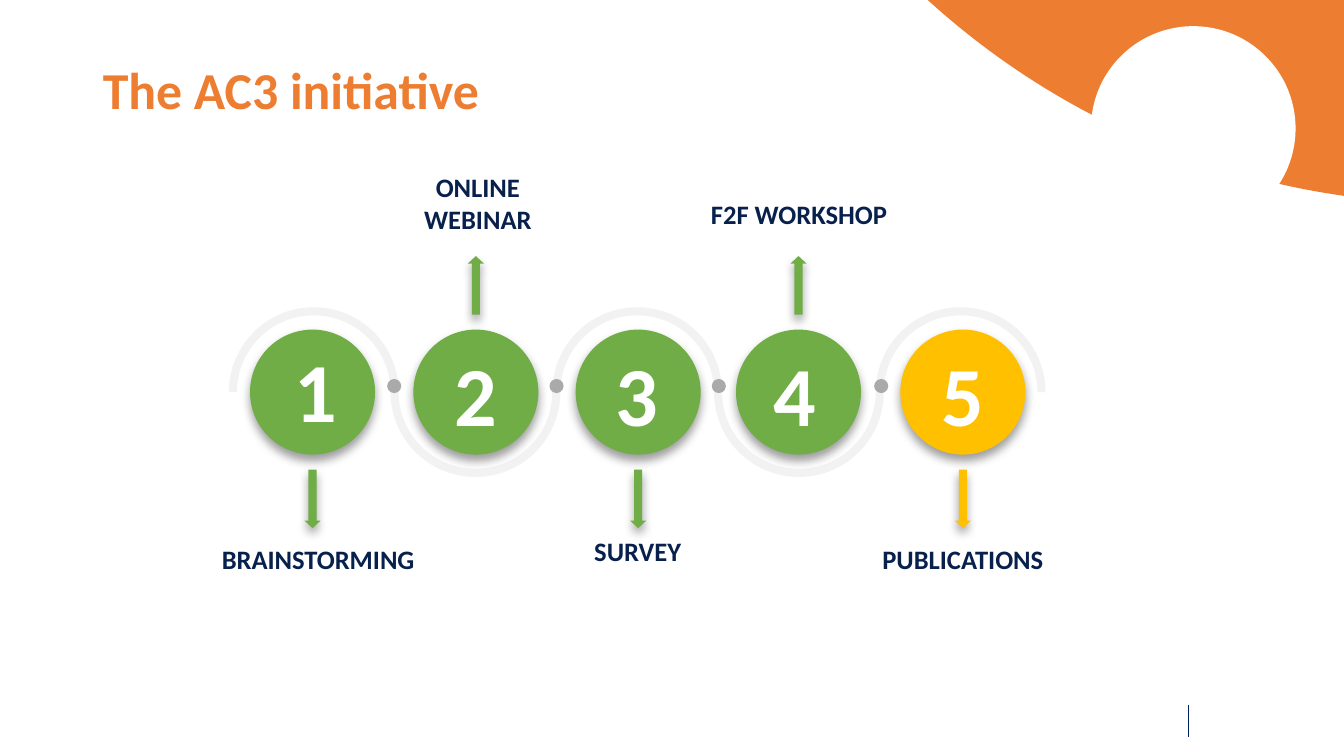
from math import cos, pi, sin

from lxml import etree
from pptx import Presentation
from pptx.dml.color import RGBColor
from pptx.enum.shapes import MSO_CONNECTOR, MSO_SHAPE
from pptx.enum.text import MSO_ANCHOR, PP_ALIGN
from pptx.oxml import parse_xml
from pptx.oxml.ns import nsdecls, qn
from pptx.util import Inches, Pt

OVAL = MSO_SHAPE.OVAL
UP_ARROW, DOWN_ARROW = MSO_SHAPE.UP_ARROW, MSO_SHAPE.DOWN_ARROW
STRAIGHT = MSO_CONNECTOR.STRAIGHT
MIDDLE, BOTTOM = MSO_ANCHOR.MIDDLE, MSO_ANCHOR.BOTTOM
LEFT, CENTER = PP_ALIGN.LEFT, PP_ALIGN.CENTER

ORANGE = RGBColor(0xED, 0x7D, 0x31)
WHITE = RGBColor(0xFF, 0xFF, 0xFF)
GREEN = RGBColor(0x70, 0xAD, 0x47)
YELLOW = RGBColor(0xFF, 0xC0, 0x00)
PALE_GREY = RGBColor(0xF2, 0xF2, 0xF2)
GREY = RGBColor(0xAA, 0xAA, 0xAA)
NAVY = RGBColor(0x08, 0x20, 0x4C)
RULE_BLUE = RGBColor(0x00, 0x20, 0x60)
FONT = "Calibri"

# circle centre, colour, arrow, digit centre, digit top, label, label box, alignment
STEPS = [
    (3.1, GREEN, DOWN_ARROW, 3.13, 3.33, "BRAINSTORMING", (2.15, 5.34, 2.54, 0.41), LEFT),
    (4.72, GREEN, UP_ARROW, 4.72, 3.37, "ONLINE WEBINAR", (3.89, 1.64, 1.7, 0.74), CENTER),
    (6.33, GREEN, DOWN_ARROW, 6.32, 3.37, "SURVEY", (5.64, 5.26, 1.37, 0.41), CENTER),
    (7.92, GREEN, UP_ARROW, 7.88, 3.37, "F2F WORKSHOP", (6.91, 1.91, 2.03, 0.42), CENTER),
    (9.55, YELLOW, DOWN_ARROW, 9.55, 3.37, "PUBLICATIONS", (8.28, 5.34, 2.54, 0.41), CENTER),
]


def paint(shape, color):
    shape.shadow.inherit = False
    shape.fill.solid()
    shape.fill.fore_color.rgb = color
    shape.line.fill.background()


def add_figure(page, kind, box, color):
    shape = page.shapes.add_shape(kind, *map(Inches, box))
    paint(shape, color)
    return shape


def add_drop_shadow(shape):
    effects = shape._element.spPr.find(qn("a:effectLst"))
    effects.append(parse_xml(
        f'<a:outerShdw {nsdecls("a")} blurRad="{Pt(7)}" dist="{Pt(4.2)}" '
        'dir="5400000" algn="t" rotWithShape="0"><a:srgbClr val="000000">'
        '<a:alpha val="39000"/></a:srgbClr></a:outerShdw>'))


def style_text(para, size, color, align):
    para.alignment = align
    para.font.name = FONT
    para.font.size = Pt(size)
    para.font.bold = True
    para.font.color.rgb = color


def add_text(page, box, text, size, color, anchor, align=CENTER):
    frame = page.shapes.add_textbox(*map(Inches, box)).text_frame
    frame.word_wrap = True
    frame.vertical_anchor = anchor
    frame.margin_left = frame.margin_right = Inches(0.05)
    frame.margin_top = frame.margin_bottom = Inches(0.05)
    frame.text = text
    style_text(frame.paragraphs[0], size, color, align)


def add_decoration(page):
    add_figure(page, OVAL, (6.67, -13.48, 15.5, 15.5), ORANGE)
    add_figure(page, OVAL, (10.82, 0.26, 2.03, 2.03), WHITE)
    rule = page.shapes.add_connector(
        STRAIGHT, Inches(11.79), Inches(6.99), Inches(11.79), Inches(7.31))
    rule.line.color.rgb = RULE_BLUE
    rule.line.width = Pt(1)
    etree.SubElement(rule._element.spPr, qn("a:effectLst"))


def add_title(page, box):
    title = page.shapes.title
    title.left, title.top, title.width, title.height = map(Inches, box)
    title.text_frame.text = "The AC3 initiative"
    title.text_frame.vertical_anchor = MIDDLE
    para = title.text_frame.paragraphs[0]
    para.line_spacing = 0.9
    style_text(para, 37, ORANGE, LEFT)


def wave_edge(left, middle, pitch, offset):
    """Points along half circles that arch up and down in turn."""
    points = []
    for arch in range(len(STEPS)):
        side = 1 if arch % 2 == 0 else -1
        radius = pitch / 2 + side * offset
        center = left + pitch * (arch + 0.5)
        for step in range(41):
            angle = pi * (1 - step / 40)
            points.append((Inches(center + radius * cos(angle)),
                           Inches(middle - side * radius * sin(angle))))
    return points


def add_wave(page, box):
    left, top, width, height = box
    thickness = 0.08
    pitch = (width - thickness) / len(STEPS)
    edges = [wave_edge(left + thickness / 2, top + height / 2, pitch, offset)
             for offset in (thickness / 2, -thickness / 2)]
    outline = edges[0] + edges[1][::-1]
    builder = page.shapes.build_freeform(*outline[0], scale=1.0)
    builder.add_line_segments(outline[1:], close=True)
    paint(builder.convert_to_shape(), PALE_GREY)


def add_timeline(page, box):
    left, top, width, height = box
    add_wave(page, box)
    diameter = 1.24
    for center, color, arrow, *_ in STEPS:
        circle_box = (center - diameter / 2, top + 0.22, diameter, diameter)
        add_drop_shadow(add_figure(page, OVAL, circle_box, color))
    for gap in range(len(STEPS) - 1):
        add_figure(page, OVAL, (left + 1.57 + 1.61 * gap, top + 0.71, 0.14, 0.14), GREY)
    for number, step in enumerate(STEPS, 1):
        center, color, arrow, digit_center, digit_top, label, label_box, align = step
        arrow_top = top - 0.51 if arrow == UP_ARROW else top + 1.61
        pointer = add_figure(page, arrow, (center - 0.08, arrow_top, 0.16, 0.58), color)
        pointer.adjustments[0] = 0.5
        pointer.adjustments[1] = 0.47
        add_drop_shadow(pointer)
        add_text(page, (digit_center - 0.31, digit_top, 0.62, 1.06),
                 str(number), 60, WHITE, MIDDLE)
        add_text(page, label_box, label, 19, NAVY, BOTTOM, align)


def main():
    deck = Presentation()
    deck.slide_width, deck.slide_height = Inches(13.33), Inches(7.5)
    page = deck.slides.add_slide(deck.slide_layouts[5])
    add_decoration(page)
    add_title(page, (0.92, 0.3, 11.5, 1.24))
    add_timeline(page, (2.27, 3.05, 8.1, 1.68))
    deck.save("out.pptx")


if __name__ == "__main__":
    main()
